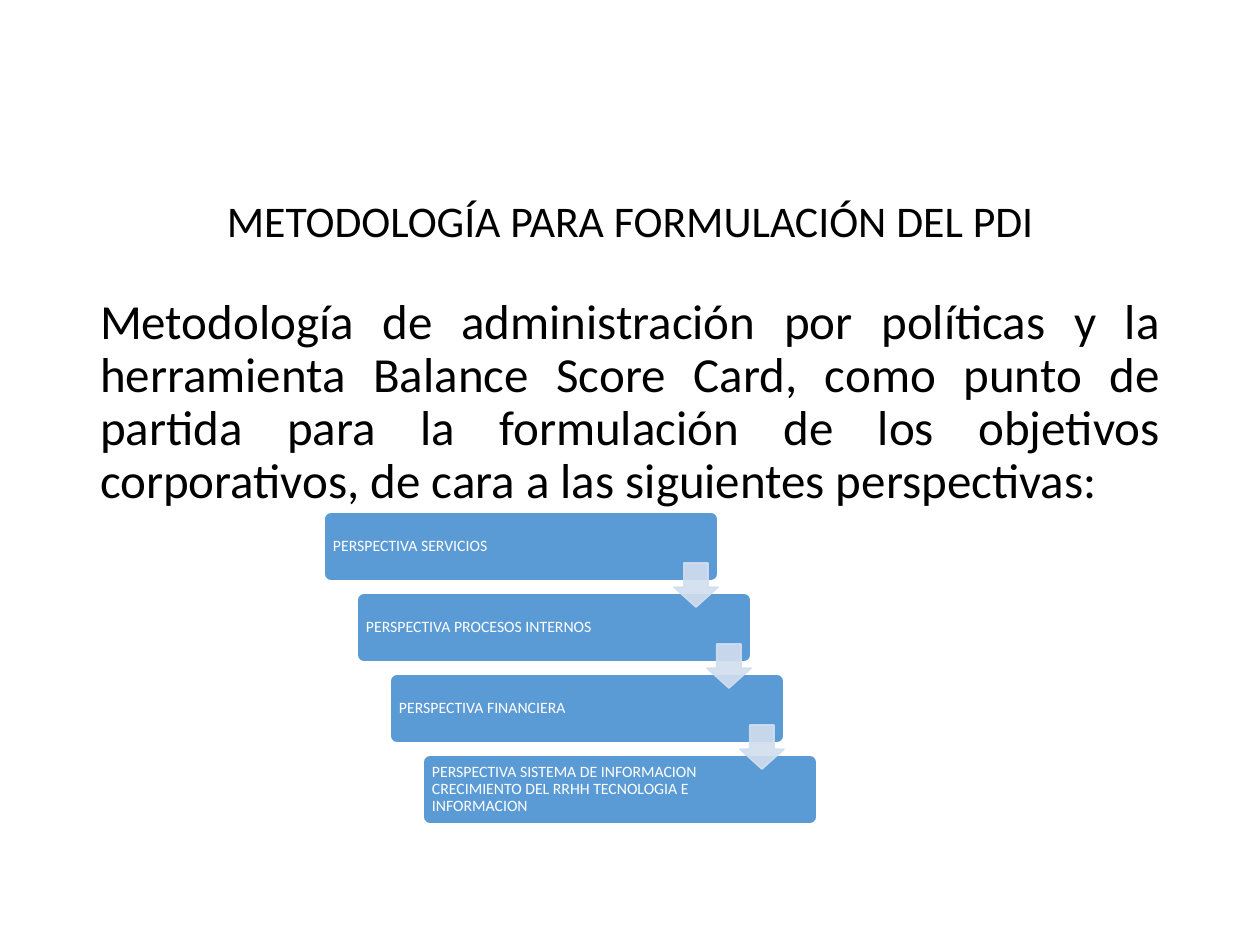
from lxml.etree import SubElement
from pptx import Presentation
from pptx.dml.color import RGBColor
from pptx.enum.shapes import MSO_SHAPE
from pptx.enum.text import MSO_ANCHOR, MSO_AUTO_SIZE, PP_ALIGN
from pptx.oxml.ns import qn
from pptx.util import Emu, Pt

PX_PER_INCH = 126
COLORS = {"text": "000000", "step": "5B9BD5", "light": "FFFFFF", "arrow": "D2DEEF"}
STEPS = [
    "PERSPECTIVA SERVICIOS",
    "PERSPECTIVA PROCESOS INTERNOS",
    "PERSPECTIVA FINANCIERA",
    "PERSPECTIVA SISTEMA DE INFORMACION CRECIMIENTO DEL RRHH TECNOLOGIA E INFORMACION",
]


def px(length):
    return Emu(round(length * 914400 / PX_PER_INCH))


def rgb(name):
    return RGBColor.from_string(COLORS[name])


class SlideBuilder:
    font = "Calibri"

    def __init__(self, page):
        self.page = page

    def add_text(self, shape, text, size, color, align, anchor, insets):
        frame = shape.text_frame
        frame.word_wrap = True
        frame.auto_size = MSO_AUTO_SIZE.NONE
        frame.vertical_anchor = anchor
        frame.margin_left, frame.margin_top, frame.margin_right, frame.margin_bottom = map(px, insets)
        para = frame.paragraphs[0]
        para.alignment = align
        para.line_spacing = 0.9
        para.space_before = Pt(0)
        span = para.add_run()
        span.text = text
        span.font.name = self.font
        span.font.size = Pt(size)
        span.font.color.rgb = rgb(color)
        return para

    def placeholder(self, index, box, text, size, align, anchor):
        shape = self.page.placeholders[index]
        shape.left, shape.top, shape.width, shape.height = map(px, box)
        return self.add_text(shape, text, size, "text", align, anchor, (13, 6, 13, 6))

    def title(self, box, text):
        self.placeholder(0, box, text, 25, PP_ALIGN.CENTER, MSO_ANCHOR.MIDDLE)

    def body(self, box, text):
        para = self.placeholder(1, box, text, 28, PP_ALIGN.JUSTIFY, MSO_ANCHOR.TOP)
        properties = para._p.get_or_add_pPr()
        properties.set("marL", "0")
        properties.set("indent", "0")
        SubElement(properties, qn("a:buNone"))

    def shape(self, kind, box, adjustments, fill, line):
        shape = self.page.shapes.add_shape(kind, *map(px, box))
        shape.shadow.inherit = False
        for index, value in enumerate(adjustments):
            shape.adjustments[index] = value
        shape.fill.solid()
        shape.fill.fore_color.rgb = rgb(fill)
        shape.line.color.rgb = rgb(line)
        shape.line.width = Pt(1)
        return shape

    def step(self, box, text):
        shape = self.shape(MSO_SHAPE.ROUNDED_RECTANGLE, box, [0.1], "step", "light")
        # The wide right inset keeps the text clear of the arrows
        self.add_text(shape, text, 9, "light", PP_ALIGN.LEFT, MSO_ANCHOR.MIDDLE, (7, 5, 82, 5))

    def arrow(self, box):
        shape = self.shape(MSO_SHAPE.DOWN_ARROW, box, [0.55, 0.45], "arrow", "arrow")
        # Fill and line are both 90% opaque
        for color in shape._element.spPr.iter(qn("a:srgbClr")):
            SubElement(color, qn("a:alpha"), val="90000")


def main():
    deck = Presentation()
    deck.slide_width, deck.slide_height = px(1260), px(945)
    builder = SlideBuilder(deck.slides.add_slide(deck.slide_layouts[1]))

    # Heading and introduction
    builder.title((87, 184, 1086, 79), "METODOLOGÍA PARA FORMULACIÓN DEL PDI")
    builder.body(
        (87, 291, 1086, 271),
        "Metodología de administración por políticas y la herramienta Balance Score Card, "
        "como punto de partida para la formulación de los objetivos corporativos, "
        "de cara a las siguientes perspectivas:",
    )

    # Staircase of perspectives, then the arrows that join them
    step_x, step_y = 33, 81
    for index, text in enumerate(STEPS):
        builder.step((324 + index * step_x, 512 + index * step_y, 394, 69), text)
    for index in range(len(STEPS) - 1):
        builder.arrow((674 + index * step_x, 563 + index * step_y, 44, 44))

    deck.save("out.pptx")


if __name__ == "__main__":
    main()
